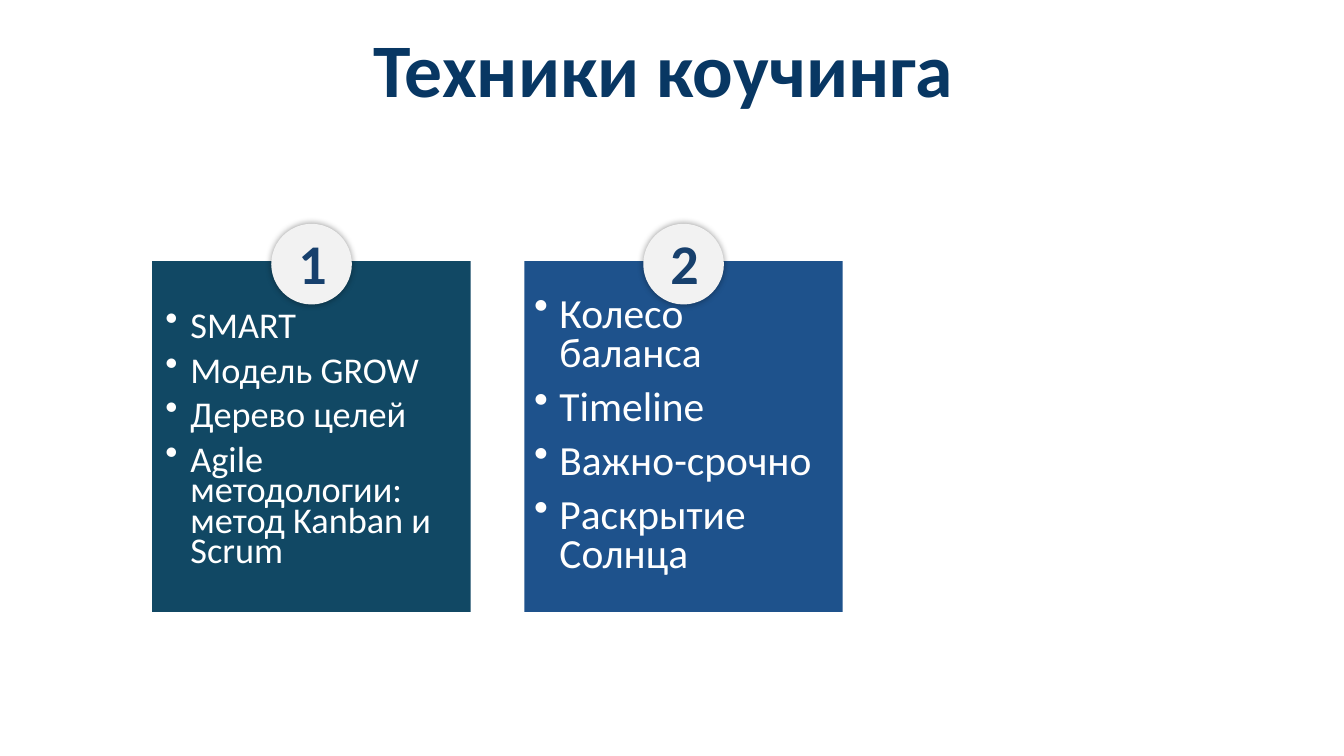
import pptx
import pptx.dml.color
import pptx.enum.shapes
import pptx.enum.text
import pptx.oxml.ns
import pptx.util
from lxml import etree

RGBColor = pptx.dml.color.RGBColor
ALIGN = pptx.enum.text.PP_ALIGN
ANCHOR = pptx.enum.text.MSO_ANCHOR
SHAPE = pptx.enum.shapes.MSO_SHAPE
qn = pptx.oxml.ns.qn

TITLE_NAVY = RGBColor(0x08, 0x37, 0x63)
NUMBER_NAVY = RGBColor(0x17, 0x40, 0x6D)
TEAL = RGBColor(0x11, 0x48, 0x64)
BLUE = RGBColor(0x1E, 0x52, 0x8C)
PALE = RGBColor(0xF2, 0xF2, 0xF2)
WHITE = RGBColor(0xFF, 0xFF, 0xFF)

# Card geometry, in percent of the slide's width or height
FIRST_CARD, CARD_STEP, CARD_WIDTH = 11.33, 27.68, 23.7
CARD_TOP, CARD_HEIGHT = 34.53, 46.4
BADGE_WIDTH, BADGE_HEIGHT, BADGE_TOP = 6, 10.67, 29.6
LIST_HEIGHT = 38.93

# Fill, list inset, list top, list width, list size, line spacing, techniques
CARDS = [
    (TEAL, 0.23, 40.93, 23.03, 25.9, 0.7,
     ["SMART", "Модель GROW", "Дерево целей",
      "Аgile методологии: метод Kanban и Scrum"]),
    (BLUE, 0, 38.53, 23.63, 29.6, 0.8,
     ["Колесо баланса", "Timeline", "Важно-срочно", "Раскрытие Солнца"]),
]


def write(paragraph, text, size, color, bold=False, align=ALIGN.LEFT,
          line_spacing=1.0, space_before=0, bullet=False):
    """Put formatted text into a paragraph."""
    if bullet:
        properties = paragraph._p.get_or_add_pPr()
        indent = pptx.util.Inches(0.25)
        properties.set("marL", str(indent))
        properties.set("indent", str(-indent))
        etree.SubElement(properties, qn("a:buChar"), char="•")
    paragraph.alignment = align
    paragraph.line_spacing = line_spacing
    paragraph.space_before = pptx.util.Pt(space_before)
    run = paragraph.add_run()
    run.text = text
    run.font.name = "Calibri"
    run.font.size = pptx.util.Pt(size)
    run.font.bold = bold
    run.font.color.rgb = color


class SlideBuilder:
    def __init__(self, deck):
        self.deck = deck
        self.slide = deck.slides.add_slide(deck.slide_layouts[6])

    def area(self, left, top, width, height):
        """Turn percentages of the slide into lengths."""
        across, down = self.deck.slide_width, self.deck.slide_height
        return [int(share * full / 100) for share, full in
                ((left, across), (top, down), (width, across), (height, down))]

    def block(self, kind, area, fill):
        block = self.slide.shapes.add_shape(kind, *self.area(*area))
        block.fill.solid()
        block.fill.fore_color.rgb = fill
        block.line.fill.background()
        block.shadow.inherit = False
        return block

    def text(self, area, lines, anchor=ANCHOR.TOP, **style):
        frame = self.slide.shapes.add_textbox(*self.area(*area)).text_frame
        frame.word_wrap = True
        frame.vertical_anchor = anchor
        for index, line in enumerate(lines):
            paragraph = frame.add_paragraph() if index else frame.paragraphs[0]
            gap = 10 if index else 0
            write(paragraph, line, space_before=gap, **style)

    def badge(self, left, number):
        disc = self.block(SHAPE.OVAL, (left, BADGE_TOP, BADGE_WIDTH, BADGE_HEIGHT), PALE)
        # Soft shadow around the disc
        effects = disc.element.spPr.find(qn("a:effectLst"))
        shadow = etree.SubElement(effects, qn("a:outerShdw"), dist="0", dir="0",
                                  blurRad=str(pptx.util.Pt(5)))
        shade = etree.SubElement(shadow, qn("a:srgbClr"), val="000000")
        etree.SubElement(shade, qn("a:alpha"), val="40000")
        self.text((left + 0.07, BADGE_TOP, BADGE_WIDTH, 10.27), [str(number)],
                  size=40, color=NUMBER_NAVY, bold=True, align=ALIGN.CENTER)

    def card(self, number, fill, inset, list_top, list_width, size, spacing, techniques):
        left = FIRST_CARD + (number - 1) * CARD_STEP
        self.block(SHAPE.RECTANGLE, (left, CARD_TOP, CARD_WIDTH, CARD_HEIGHT), fill)
        self.badge(left + (CARD_WIDTH - BADGE_WIDTH) / 2, number)
        self.text((left + inset, list_top, list_width, LIST_HEIGHT), techniques,
                  size=size, color=WHITE, line_spacing=spacing, bullet=True)


def main():
    deck = pptx.Presentation()
    deck.slide_width = pptx.util.Inches(13.33)
    deck.slide_height = pptx.util.Inches(7.5)
    builder = SlideBuilder(deck)

    # Title
    builder.text((2.78, 1.87, 93.17, 15.6), ["Техники коучинга"], anchor=ANCHOR.MIDDLE,
                 size=54, color=TITLE_NAVY, bold=True, align=ALIGN.CENTER,
                 line_spacing=0.9)

    # Numbered cards
    for number, card in enumerate(CARDS, start=1):
        builder.card(number, *card)

    deck.save("out.pptx")


if __name__ == "__main__":
    main()
